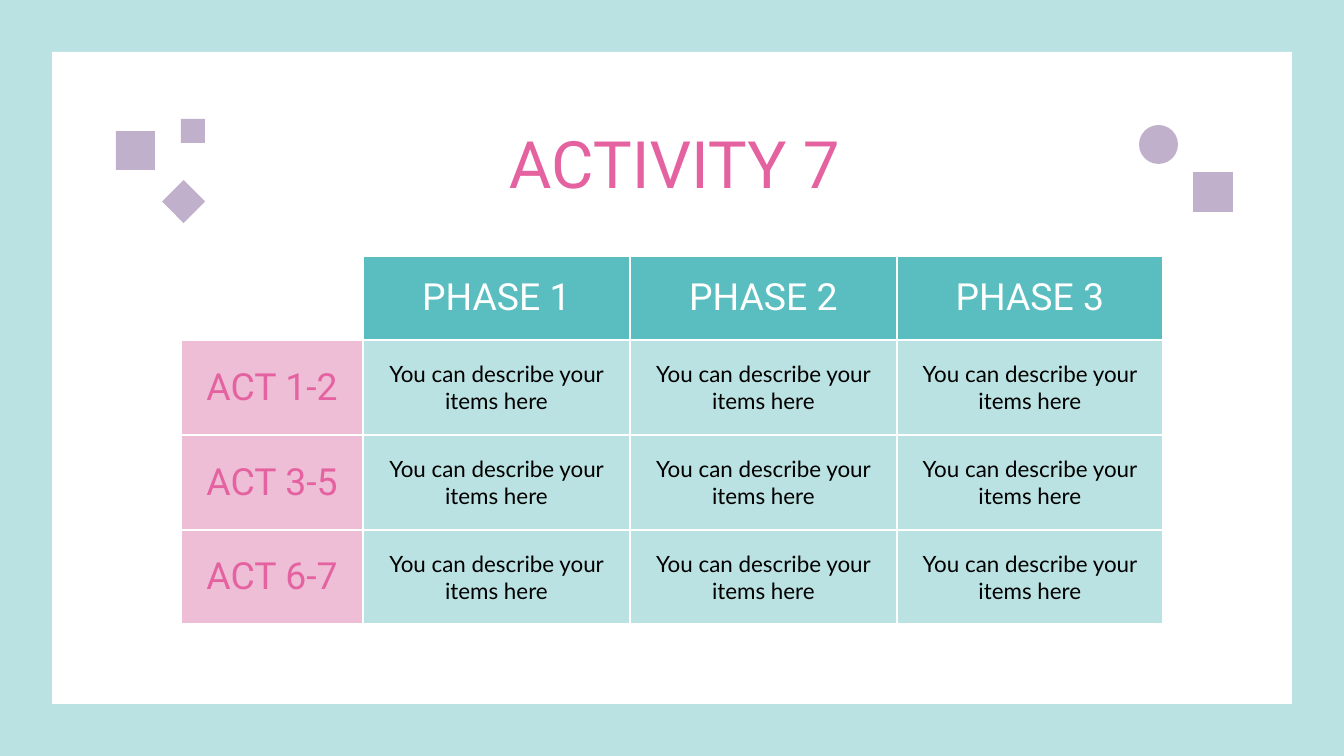
from lxml.etree import SubElement
from pptx import Presentation
from pptx.dml.color import RGBColor
from pptx.enum.shapes import MSO_SHAPE
from pptx.enum.text import MSO_ANCHOR, PP_ALIGN
from pptx.oxml.ns import qn
from pptx.util import Emu, Inches, Pt

WHITE = RGBColor(0xFF, 0xFF, 0xFF)
BLACK = RGBColor(0x00, 0x00, 0x00)
PALE_TEAL = RGBColor(0xBB, 0xE2, 0xE2)
TEAL = RGBColor(0x5A, 0xBE, 0xC0)
PINK = RGBColor(0xE5, 0x62, 0xA0)
PALE_PINK = RGBColor(0xEE, 0xBD, 0xD6)
LILAC = RGBColor(0xC0, 0xB0, 0xCC)

HEADING_FONT, BODY_FONT = "Roboto", "Lato"
EMU_PER_PX = 914400 / 134.4


def px(length):
    return Emu(round(length * EMU_PER_PX))


class SlideBuilder:
    """Holds the style and the current slide."""

    inset = Inches(0.1)
    border_width = Pt(1.5)

    def __init__(self, deck):
        self.slide = deck.slides.add_slide(deck.slide_layouts[5])

    def background(self, color):
        fill = self.slide.background.fill
        fill.solid()
        fill.fore_color.rgb = color

    def add_text(self, frame, text, size, font, color):
        paragraph = frame.paragraphs[0]
        paragraph.alignment = PP_ALIGN.CENTER
        run = paragraph.add_run()
        run.text = text
        run.font.size = Pt(size)
        run.font.name = font
        run.font.color.rgb = color

    def title(self, text, left, top, width, height):
        heading = self.slide.shapes.title
        heading.left, heading.top = px(left), px(top)
        heading.width, heading.height = px(width), px(height)
        frame = heading.text_frame
        frame.word_wrap = True
        frame.vertical_anchor = MSO_ANCHOR.TOP
        frame.margin_left = frame.margin_right = self.inset
        frame.margin_top = frame.margin_bottom = self.inset
        self.add_text(frame, text, 35, HEADING_FONT, PINK)

    def shape(self, kind, left, top, width, height, color, rotation=0, group=None):
        parent = group or self.slide
        item = parent.shapes.add_shape(kind, px(left), px(top), px(width), px(height))
        item.shadow.inherit = False
        item.fill.solid()
        item.fill.fore_color.rgb = color
        item.line.fill.background()
        item.rotation = rotation

    def ornament(self, pieces):
        group = self.slide.shapes.add_group_shape()
        for kind, left, top, side, rotation in pieces:
            self.shape(kind, left, top, side, side, LILAC, rotation, group)

    def table(self, left, top, widths, heights):
        grid = self.slide.shapes.add_table(
            len(heights), len(widths), px(left), px(top),
            px(sum(widths)), px(sum(heights))).table
        for column, width in zip(grid.columns, widths):
            column.width = px(width)
        for row, height in zip(grid.rows, heights):
            row.height = px(height)
        return grid

    def cell(self, cell, text, size, font, color, fill):
        cell.vertical_anchor = MSO_ANCHOR.MIDDLE
        cell.margin_left = cell.margin_right = self.inset
        cell.margin_top = cell.margin_bottom = self.inset
        if text:
            self.add_text(cell.text_frame, text, size, font, color)
        self.borders(cell)
        if fill is None:
            cell.fill.background()
        else:
            cell.fill.solid()
            cell.fill.fore_color.rgb = fill

    def borders(self, cell):
        properties = cell._tc.get_or_add_tcPr()
        for side in ("a:lnL", "a:lnR", "a:lnT", "a:lnB"):
            line = SubElement(properties, qn(side), w=str(self.border_width))
            solid = SubElement(line, qn("a:solidFill"))
            SubElement(solid, qn("a:srgbClr"), val=str(WHITE))


def main():
    deck = Presentation()
    deck.slide_width, deck.slide_height = px(1344), px(756)
    builder = SlideBuilder(deck)

    # White panel on a pale teal frame, behind the title
    builder.background(PALE_TEAL)
    builder.shape(MSO_SHAPE.RECTANGLE, 52, 52, 1240, 652, WHITE)
    panel = builder.slide.shapes[-1]._element
    builder.slide.shapes.title._element.addprevious(panel)
    builder.title("ACTIVITY 7", 116, 110, 1117, 85)

    # Phases across, acts down
    phases = ["PHASE 1", "PHASE 2", "PHASE 3"]
    acts = ["ACT 1-2", "ACT 3-5", "ACT 6-7"]
    plan = builder.table(181, 256, [182, 267, 267, 266], [84, 95, 95, 94])
    builder.cell(plan.cell(0, 0), "", 20, HEADING_FONT, WHITE, None)
    for column, phase in enumerate(phases, 1):
        builder.cell(plan.cell(0, column), phase, 20, HEADING_FONT, WHITE, TEAL)
    for row, act in enumerate(acts, 1):
        builder.cell(plan.cell(row, 0), act, 20, HEADING_FONT, PINK, PALE_PINK)
        for column in range(1, len(phases) + 1):
            builder.cell(plan.cell(row, column), "You can describe your items here",
                         12, BODY_FONT, BLACK, PALE_TEAL)

    # Lilac ornaments on either side of the title
    builder.ornament([
        (MSO_SHAPE.RECTANGLE, 116, 131, 39, 0),
        (MSO_SHAPE.RECTANGLE, 181, 119, 24, 0),
        (MSO_SHAPE.DIAMOND, 162, 180, 43, 0),
    ])
    builder.ornament([
        (MSO_SHAPE.DIAMOND, 1185, 164, 56, 45),
        (MSO_SHAPE.OVAL, 1139, 125, 39, 0),
    ])

    deck.save("out.pptx")


if __name__ == "__main__":
    main()
